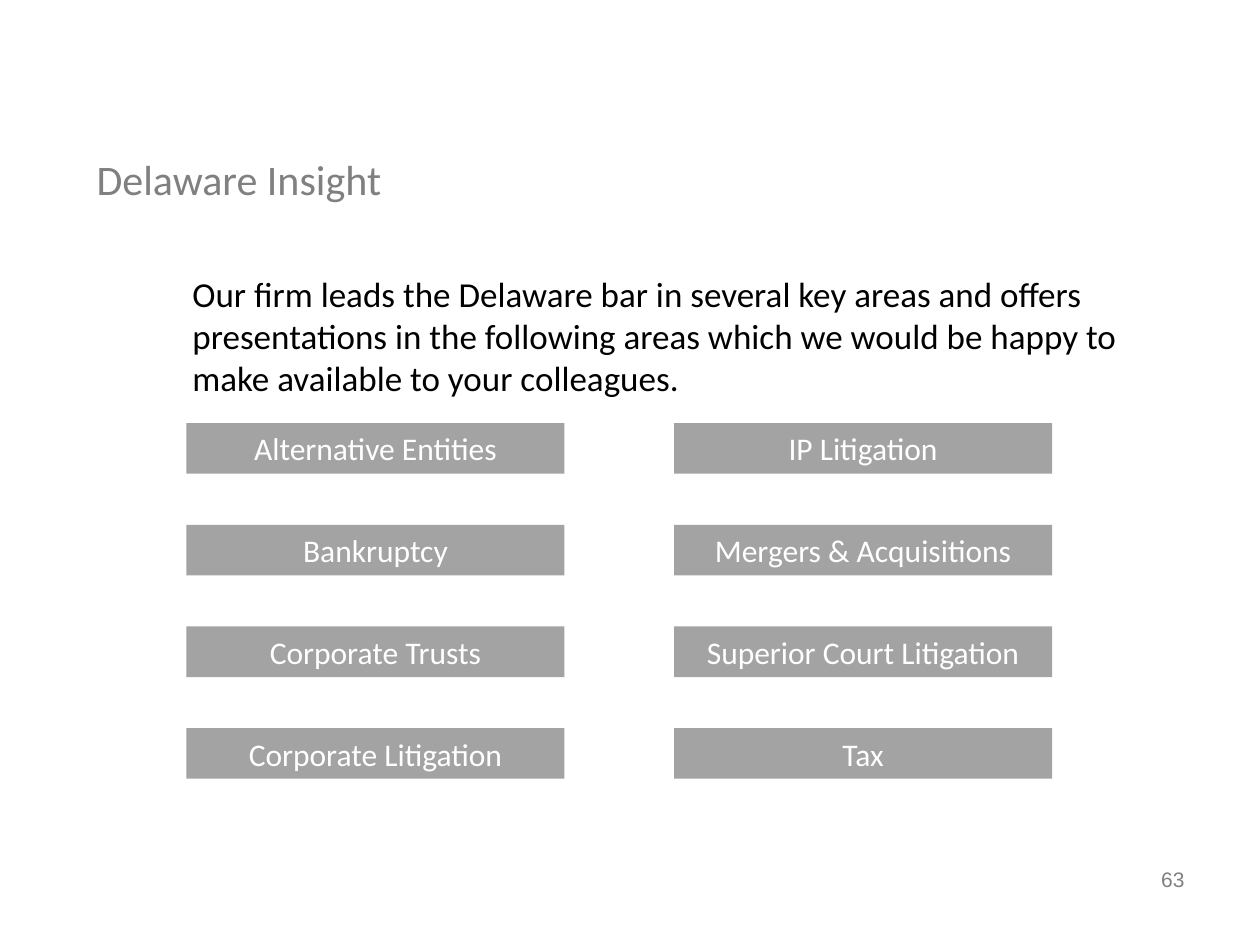
import pptx
import pptx.dml.color
import pptx.enum.shapes
import pptx.enum.text
import pptx.oxml.ns
import pptx.util
from lxml import etree
from pptx.util import Cm

COLORS = {"heading": "808080", "body": "000000", "bar": "595959", "label": "FFFFFF"}
ALIGN = pptx.enum.text.PP_ALIGN
ANCHOR = pptx.enum.text.MSO_ANCHOR
PRACTICE_COLUMNS = [
    ["Alternative Entities", "Bankruptcy", "Corporate Trusts", "Corporate Litigation"],
    ["IP Litigation", "Mergers & Acquisitions", "Superior Court Litigation", "Tax"],
]


def rgb(name):
    """Return the named palette colour."""
    return pptx.dml.color.RGBColor.from_string(COLORS[name])


def write_text(frame, text, *, size, color, font="Calibri", align=ALIGN.LEFT,
               anchor=ANCHOR.TOP, indent=0):
    """Fill a text frame with one formatted paragraph."""
    frame.word_wrap = True
    frame.vertical_anchor = anchor
    paragraph = frame.paragraphs[0]
    paragraph.alignment = align
    if indent:
        properties = paragraph._p.get_or_add_pPr()
        properties.set("marL", str(Cm(indent)))
        properties.set("indent", "0")
    run = paragraph.add_run()
    run.text = text
    run.font.name = font
    run.font.size = pptx.util.Pt(size)
    run.font.color.rgb = rgb(color)


class InsightSlide:
    """Hold the slide and the style of its elements."""

    bar_width, bar_height, bar_opacity = 7.62, 1.02, 55

    def __init__(self, slide):
        """Keep the slide to draw on."""
        self.slide = slide

    def text(self, text, left, top, width, height, **style):
        """Add a text box measured in centimetres."""
        box = self.slide.shapes.add_textbox(Cm(left), Cm(top), Cm(width), Cm(height))
        write_text(box.text_frame, text, **style)

    def bar(self, label, left, top):
        """Add a translucent bar with a centred label."""
        bar = self.slide.shapes.add_shape(
            pptx.enum.shapes.MSO_SHAPE.RECTANGLE,
            Cm(left), Cm(top), Cm(self.bar_width), Cm(self.bar_height))
        bar.shadow.inherit = False
        bar.line.fill.background()
        bar.fill.solid()
        bar.fill.fore_color.rgb = rgb("bar")
        qn = pptx.oxml.ns.qn
        fill_color = bar._element.spPr.find(qn("a:solidFill")).find(qn("a:srgbClr"))
        etree.SubElement(fill_color, qn("a:alpha"), val=str(self.bar_opacity * 1000))
        write_text(bar.text_frame, label, size=18, color="label",
                   align=ALIGN.CENTER, anchor=ANCHOR.MIDDLE)


def main():
    """Build and save the presentation."""
    deck = pptx.Presentation()
    deck.slide_width, deck.slide_height = Cm(25.4), Cm(19.05)
    insight = InsightSlide(deck.slides.add_slide(deck.slide_layouts[6]))
    insight.text("63", 18.21, 17.35, 5.92, 1.32, size=12, color="heading",
                 font="Arial", align=ALIGN.RIGHT)
    insight.text("Delaware Insight", 1.7, 2.97, 21.62, 1.27, size=24, color="heading")
    insight.text("Our firm leads the Delaware bar in several key areas and offers "
                 "presentations in the following areas which we would be happy to "
                 "make available to your colleagues.",
                 2.36, 5.36, 20.68, 2.82, size=20, color="body", indent=1.27)
    for column, practices in enumerate(PRACTICE_COLUMNS):
        for row, practice in enumerate(practices):
            insight.bar(practice, 3.76 + column * 9.83, 8.53 + row * 2.05)
    deck.save("out.pptx")


if __name__ == "__main__":
    main()
